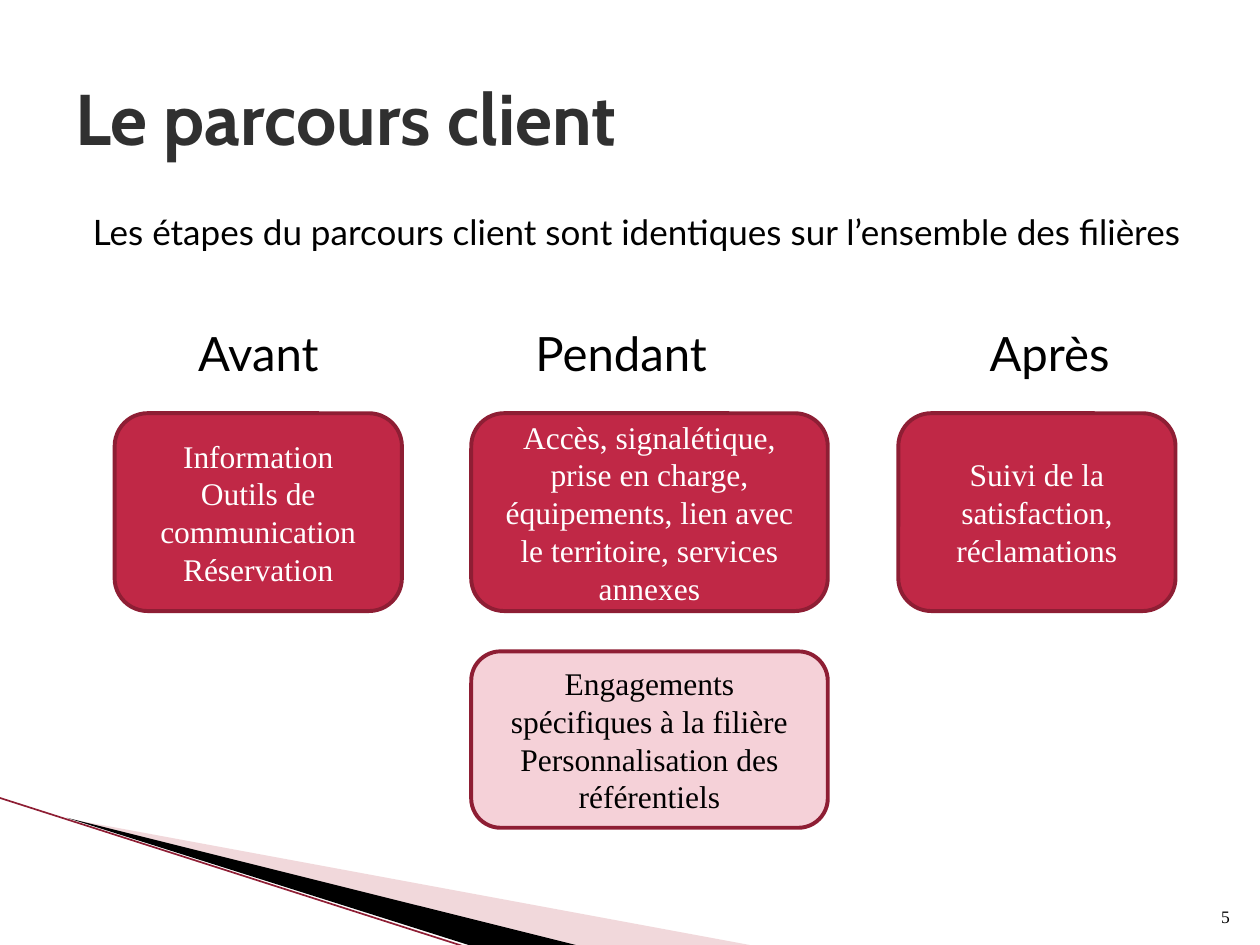
from lxml import etree
from pptx import Presentation
from pptx.dml.color import RGBColor
from pptx.enum.shapes import MSO_CONNECTOR, MSO_SHAPE
from pptx.enum.text import MSO_ANCHOR, PP_ALIGN
from pptx.oxml.ns import qn
from pptx.util import Inches, Pt

ROUND = MSO_SHAPE.ROUNDED_RECTANGLE
STRAIGHT = MSO_CONNECTOR.STRAIGHT
LEFT, CENTER, RIGHT = PP_ALIGN.LEFT, PP_ALIGN.CENTER, PP_ALIGN.RIGHT
MIDDLE, BOTTOM = MSO_ANCHOR.MIDDLE, MSO_ANCHOR.BOTTOM

RED = RGBColor(0xC0, 0x28, 0x46)
DARK = RGBColor(0x8E, 0x1E, 0x34)
PINK = RGBColor(0xF5, 0xD1, 0xD8)
ROSE = RGBColor(0xDD, 0x9F, 0xA5)
GREY = RGBColor(0x30, 0x30, 0x30)
BLACK = RGBColor(0, 0, 0)
WHITE = RGBColor(0xFF, 0xFF, 0xFF)
SANS, SERIF, HEAD = "Lato", "Times New Roman", "Cabin"


def write(shape, text, font=SERIF, size=18, color=BLACK, bold=False,
          align=CENTER, anchor=MIDDLE):
    frame = shape.text_frame
    frame.word_wrap = True
    frame.vertical_anchor = anchor
    frame.text = text
    for para in frame.paragraphs:
        para.alignment = align
        para.font.name = font
        para.font.size = Pt(size)
        para.font.bold = bold
        para.font.color.rgb = color


def label(slide, box, text, **style):
    write(slide.shapes.add_textbox(*map(Inches, box)), text, **style)


def card(slide, box, text, fill, color):
    shape = slide.shapes.add_shape(ROUND, *map(Inches, box))
    shape.shadow.inherit = False
    shape.fill.solid()
    shape.fill.fore_color.rgb = fill
    shape.line.color.rgb = DARK
    shape.line.width = Pt(2.25)
    write(shape, text, color=color)


def wedge(slide, points, color, alpha=None):
    """Draw a borderless polygon; alpha is its opacity in percent."""
    start, *rest = [(Inches(x), Inches(y)) for x, y in points]
    build = slide.shapes.build_freeform(*start)
    build.add_line_segments(rest, close=True)
    shape = build.convert_to_shape()
    shape.shadow.inherit = False
    shape.fill.solid()
    shape.fill.fore_color.rgb = color
    shape.line.fill.background()
    if alpha:
        tint = shape.fill._xPr.find(".//" + qn("a:srgbClr"))
        etree.SubElement(tint, qn("a:alpha"), val=str(alpha * 1000))


def corner(slide, left, top):
    """Draw the slanted decoration from its top left point."""
    wedge(slide, [(left + 0.56, top + 0.17), (left + 5.96, 7.5),
                  (left + 4.57, 7.5)], ROSE, alpha=40)
    wedge(slide, [(left + 0.54, top + 0.16), (left + 4.58, 7.5),
                  (left + 3.73, 7.5)], BLACK)
    edge = slide.shapes.add_connector(
        STRAIGHT, Inches(left), Inches(top), Inches(left + 3.72), Inches(7.52))
    edge.line.color.rgb = DARK
    edge.line.width = Pt(0.95)
    etree.SubElement(edge._element.spPr, qn("a:effectLst"))


def stages(slide, top):
    """Place the three stage headings and cards, then the extra card."""
    # heading centre, heading, card left, card width, card text
    steps = [
        (2.05, "Avant", 0.91, 2.28,
         "Information\nOutils de communication\nRéservation"),
        (4.93, "Pendant", 3.74, 2.83,
         "Accès, signalétique, prise en charge, équipements, "
         "lien avec le territoire, services annexes"),
        (8.33, "Après", 7.13, 2.2, "Suivi de la satisfaction, réclamations"),
    ]
    for mid, name, left, width, text in steps:
        label(slide, (mid - 1, top, 2, 0.5), name, font=SANS, size=27)
        card(slide, (left, top + 0.73, width, 1.57), text, RED, WHITE)
    card(slide, (3.74, top + 2.62, 2.83, 1.4),
         "Engagements spécifiques à la filière\n"
         "Personnalisation des référentiels", PINK, BLACK)


def main():
    deck = Presentation()
    deck.slide_width, deck.slide_height = Inches(10), Inches(7.5)
    slide = deck.slides.add_slide(deck.slide_layouts[6])
    corner(slide, -0.01, 6.33)
    label(slide, (0.5, 0.3, 9, 1.25), "Le parcours client",
          font=HEAD, size=41, color=GREY, bold=True, align=LEFT)
    label(slide, (0.41, 1.62, 9.29, 0.43),
          "Les étapes du parcours client sont identiques "
          "sur l’ensemble des filières", font=SANS, size=20)
    stages(slide, 2.55)
    label(slide, (9.46, 7.01, 0.4, 0.4), "5",
          size=10, align=RIGHT, anchor=BOTTOM)
    deck.save("out.pptx")


if __name__ == "__main__":
    main()
